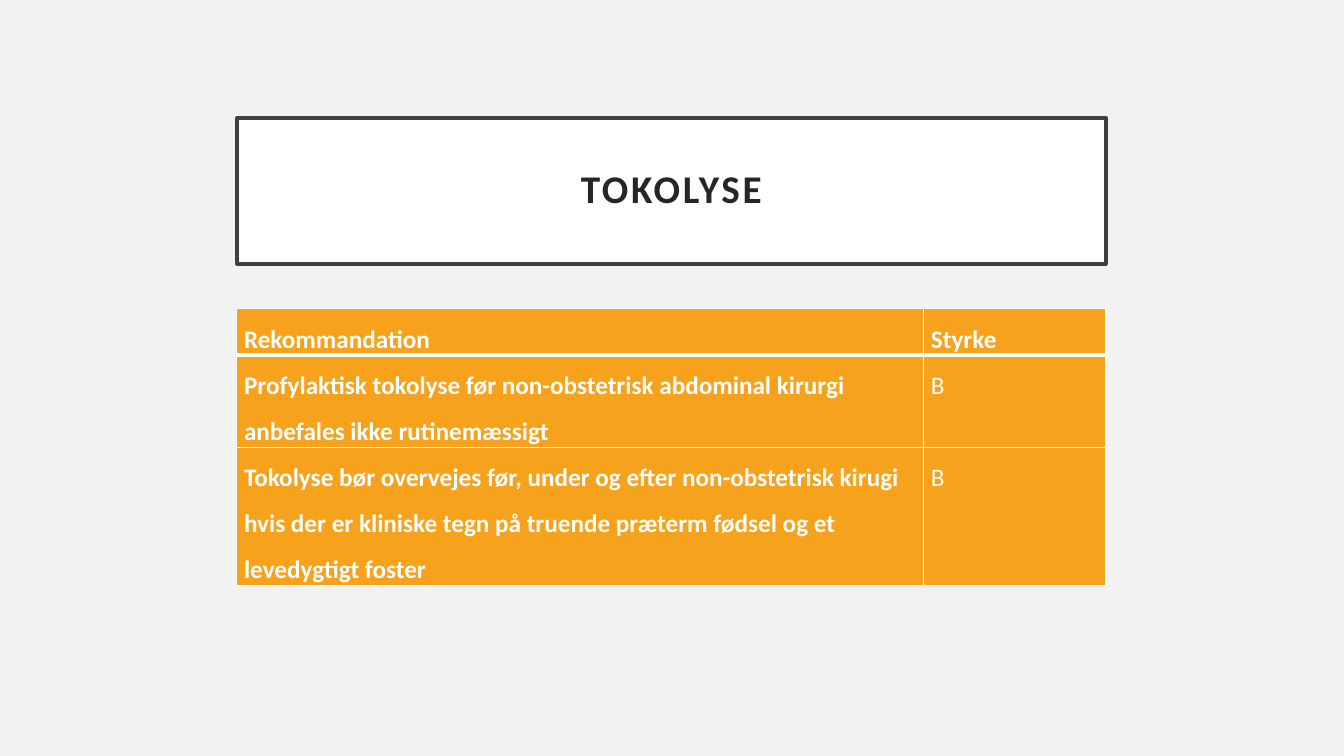
"""Build a slide with a framed title and a table of graded recommendations."""
from lxml.etree import SubElement
from pptx import Presentation
from pptx.dml.color import RGBColor
from pptx.enum.text import MSO_ANCHOR, MSO_AUTO_SIZE, PP_ALIGN
from pptx.oxml.ns import qn
from pptx.util import Cm, Pt

TITLE = "TOKOLYSE"
ROWS = [
    ("Rekommandation", "Styrke"),
    ("Profylaktisk tokolyse før non-obstetrisk abdominal kirurgi anbefales ikke rutinemæssigt", "B"),
    ("Tokolyse bør overvejes før, under og efter non-obstetrisk kirugi hvis der er kliniske tegn "
     "på truende præterm fødsel og et levedygtigt foster", "B"),
]
COLUMN_WIDTHS = [17.31, 4.59]
ROW_HEIGHTS = [1.07, 2.24, 3.43]
LEFT, WIDTH = 5.97, 21.9
TITLE_TOP, TITLE_HEIGHT = 2.97, 3.68
TABLE_TOP = 7.78
FONT = "Calibri"
WHITE, ORANGE, BACKGROUND = "FFFFFF", "F6A21D", "F2F2F2"
FRAME, TITLE_COLOR = "404040", "262626"


def fill_with(fill, color):
    fill.solid()
    fill.fore_color.rgb = RGBColor.from_string(color)


def format_text(paragraph, size, color, bold, line_spacing):
    paragraph.line_spacing = line_spacing
    font = paragraph.font
    font.name, font.size, font.bold = FONT, Pt(size), bold
    font.color.rgb = RGBColor.from_string(color)


def set_margins(target, horizontal, vertical):
    target.margin_left = target.margin_right = Cm(horizontal)
    target.margin_top = target.margin_bottom = Cm(vertical)


def add_borders(cell, widths):
    properties = cell._tc.get_or_add_tcPr()
    for position, (side, width) in enumerate(widths.items()):
        line = SubElement(properties, qn(f"a:ln{side}"), w=str(Pt(width)))
        SubElement(SubElement(line, qn("a:solidFill")), qn("a:srgbClr"), val=WHITE)
        properties.insert(position, line)


def add_title(slide):
    title = slide.shapes.title
    title.left, title.top = Cm(LEFT), Cm(TITLE_TOP)
    title.width, title.height = Cm(WIDTH), Cm(TITLE_HEIGHT)
    fill_with(title.fill, WHITE)
    fill_with(title.line.fill, FRAME)
    title.line.width = Pt(2.5)
    frame = title.text_frame
    frame.text = TITLE
    frame.auto_size = MSO_AUTO_SIZE.NONE
    frame.vertical_anchor = MSO_ANCHOR.MIDDLE
    set_margins(frame, 0.5, 0.5)
    paragraph = frame.paragraphs[0]
    paragraph.alignment = PP_ALIGN.CENTER
    format_text(paragraph, 28, TITLE_COLOR, True, 0.9)
    paragraph.runs[0]._r.get_or_add_rPr().set("spc", "200")


def add_recommendations(slide):
    table = slide.shapes.add_table(
        len(ROWS), len(COLUMN_WIDTHS), Cm(LEFT), Cm(TABLE_TOP), Cm(WIDTH), Cm(sum(ROW_HEIGHTS))
    ).table
    for column, width in zip(table.columns, COLUMN_WIDTHS):
        column.width = Cm(width)
    for row_index, (texts, height) in enumerate(zip(ROWS, ROW_HEIGHTS)):
        table.rows[row_index].height = Cm(height)
        for column_index, text in enumerate(texts):
            cell = table.cell(row_index, column_index)
            cell.text = text
            set_margins(cell, 0.18, 0)
            fill_with(cell.fill, ORANGE)
            top = 3 if row_index == 1 else 1
            bottom = 3 if row_index == 0 else 1
            add_borders(cell, {"L": 1, "R": 1, "T": top, "B": bottom})
            bold = row_index == 0 or column_index == 0
            format_text(cell.text_frame.paragraphs[0], 18, WHITE, bold, 1.5)


def main():
    presentation = Presentation()
    presentation.slide_width, presentation.slide_height = Cm(33.87), Cm(19.05)
    slide = presentation.slides.add_slide(presentation.slide_layouts[5])
    fill_with(slide.background.fill, BACKGROUND)
    add_title(slide)
    add_recommendations(slide)
    presentation.save("out.pptx")


if __name__ == "__main__":
    main()
